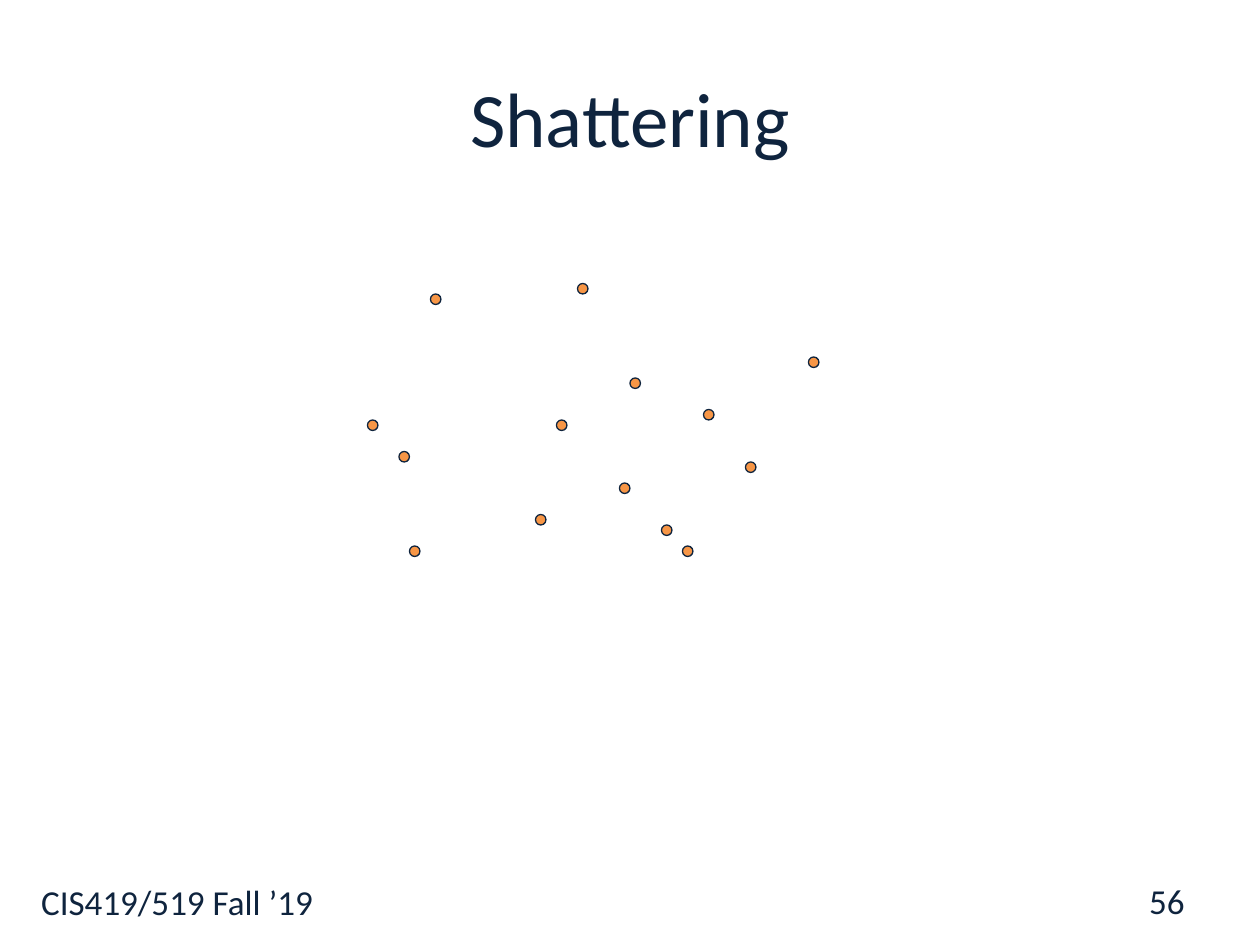
import dataclasses

import pptx
import pptx.dml.color
import pptx.enum.shapes
import pptx.enum.text
import pptx.util

Cm = pptx.util.Cm
Align = pptx.enum.text.PP_ALIGN
Anchor = pptx.enum.text.MSO_ANCHOR


@dataclasses.dataclass(frozen=True)
class Theme:
    font: str = "Calibri"
    ink: str = "0F243E"
    point_fill: str = "F79646"
    title_size: int = 44
    footer_size: int = 20
    outline: float = 0.75


THEME = Theme()

# The points lie on a grid of twelve steps to the inch; each is one step wide
STEP = 2.54 / 12
POINTS = [
    (39, 52), (41, 28), (77, 34), (38, 43), (35, 40), (60, 36), (51, 49),
    (53, 40), (55, 27), (71, 44), (59, 46), (67, 39), (63, 50), (65, 52),
]


def color(code):
    return pptx.dml.color.RGBColor.from_string(code)


def apply_format(target, values):
    for name, value in values.items():
        setattr(target, name, value)


def add_text(page, text, area, size, align, anchor):
    box = page.shapes.add_textbox(*(Cm(length) for length in area))
    apply_format(box.text_frame, {"word_wrap": True, "vertical_anchor": anchor})
    para = box.text_frame.paragraphs[0]
    para.alignment = align
    span = para.add_run()
    span.text = text
    apply_format(span.font, {"name": THEME.font, "size": pptx.util.Pt(size)})
    span.font.color.rgb = color(THEME.ink)


def add_point(page, column, row):
    point = page.shapes.add_shape(
        pptx.enum.shapes.MSO_SHAPE.OVAL,
        Cm(column * STEP), Cm(row * STEP), Cm(STEP), Cm(STEP))
    point.shadow.inherit = False
    point.fill.solid()
    point.fill.fore_color.rgb = color(THEME.point_fill)
    point.line.color.rgb = color(THEME.ink)
    point.line.width = pptx.util.Pt(THEME.outline)


def main():
    deck = pptx.Presentation()
    apply_format(deck, {"slide_width": Cm(25.4), "slide_height": Cm(19.05)})
    page = deck.slides.add_slide(deck.slide_layouts[6])

    # Course footer and title
    add_text(page, "CIS419/519 Fall ’19", (0.58, 17.63, 24.38, 1.42),
             THEME.footer_size, Align.LEFT, Anchor.TOP)
    add_text(page, "Shattering", (1.27, 0.76, 22.86, 3.18),
             THEME.title_size, Align.CENTER, Anchor.MIDDLE)

    # Scattered points
    for column, row in POINTS:
        add_point(page, column, row)

    # Page number
    add_text(page, "56", (18.21, 17.65, 5.92, 1.02),
             THEME.footer_size, Align.RIGHT, Anchor.MIDDLE)

    deck.save("out.pptx")


if __name__ == "__main__":
    main()
